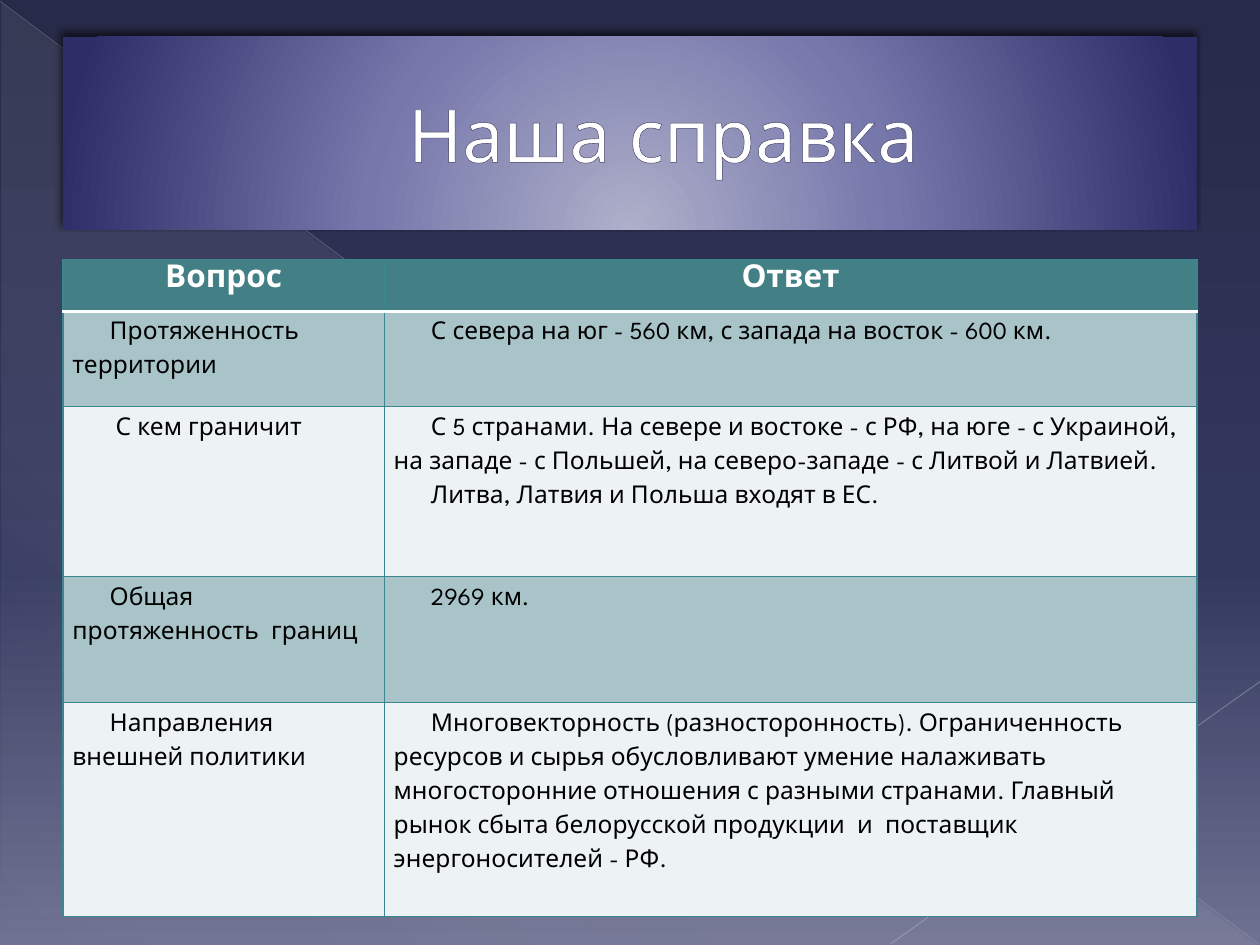
from lxml import etree
from pptx import Presentation
from pptx.dml.color import RGBColor
from pptx.enum.shapes import MSO_CONNECTOR, MSO_SHAPE
from pptx.enum.text import MSO_ANCHOR, PP_ALIGN
from pptx.oxml.ns import qn
from pptx.util import Pt

LINE = MSO_CONNECTOR.STRAIGHT
RECT, WEDGE = MSO_SHAPE.RECTANGLE, MSO_SHAPE.RIGHT_TRIANGLE
MIDDLE = MSO_ANCHOR.MIDDLE
LEFT, CENTER = PP_ALIGN.LEFT, PP_ALIGN.CENTER
FONT = "League Spartan"
COLORS = {
    "white": "FFFFFF", "black": "000000", "edge": "3C868D",
    "head": "438086", "band": "A9C4C8", "plain": "EDF3F5",
    "outline": "3A3A60", "pale": "DEDEDE", "ray": "B7B7BE", "beam": "BFBFC5",
    "night": "272A48", "dusk": "33385F", "haze": "6E7191",
    "glow": "AEAFC9", "violet": "7677AB", "navy": "2D2E68",
}
COLS = [183.6, 464.4]
ROWS = [29.5, 54.7, 97.2, 72, 122]
HEADS = ["Вопрос", "Ответ"]
FACTS = [
    ("Протяженность территории",
     "С севера на юг - 560 км, с запада на восток - 600 км."),
    (" С кем граничит",
     "С 5 странами. На севере и востоке - с РФ, на юге - с Украиной, "
     "на западе - с Польшей, на северо-западе - с Литвой и Латвией.\n"
     "Литва, Латвия и Польша входят в ЕС."),
    ("Общая протяженность  границ", "2969 км."),
    ("Направления внешней политики",
     "Многовекторность (разносторонность). Ограниченность ресурсов и сырья "
     "обусловливают умение налаживать многосторонние отношения с разными "
     "странами. Главный рынок сбыта белорусской продукции  и  поставщик "
     "энергоносителей - РФ."),
]


def rgb(name):
    return RGBColor.from_string(COLORS[name])


def node(parent, tag, **attrs):
    return etree.SubElement(parent, qn(tag), {k: str(v) for k, v in attrs.items()})


def tint(parent, name, alpha=100):
    color = node(parent, "a:srgbClr", val=COLORS[name])
    if alpha < 100:
        node(color, "a:alpha", val=alpha * 1000)


def blend(parent, stops, angle=None):
    """Swap the solid fill in parent for a gradient, radial without an angle."""
    old = parent.find(qn("a:solidFill"))
    grad = etree.Element(qn("a:gradFill"), rotWithShape="1")
    items = node(grad, "a:gsLst")
    for spot, name, alpha in stops:
        tint(node(items, "a:gs", pos=spot * 1000), name, alpha)
    if angle is None:
        shade = node(grad, "a:path", path="circle")
        node(shade, "a:fillToRect", l=50000, t=155000, r=50000, b=-55000)
    else:
        node(grad, "a:lin", ang=angle * 60000, scaled=0)
    parent.replace(old, grad)


def write(frame, text, size=14, color="black", bold=False, align=LEFT,
          margin=0, indent=0, spacing=None, outline=None):
    frame.word_wrap = True
    for i, part in enumerate(text.split("\n")):
        para = frame.add_paragraph() if i else frame.paragraphs[0]
        para.alignment, para.line_spacing = align, spacing
        props = para._p.get_or_add_pPr()
        props.set("marL", str(Pt(margin)))
        props.set("indent", str(Pt(indent)))
        run = para.add_run()
        run.text = part
        font = run.font
        font.name, font.size, font.bold = FONT, Pt(size), bold
        font.color.rgb = rgb(color)
        if outline:
            line = etree.Element(qn("a:ln"), w=str(Pt(0.5)))
            tint(node(line, "a:solidFill"), outline)
            run._r.get_or_add_rPr().insert(0, line)


class Deck:
    def __init__(self):
        self.prs = Presentation()
        self.prs.slide_width, self.prs.slide_height = Pt(720), Pt(540)
        self.slide = self.prs.slides.add_slide(self.prs.slide_layouts[6])
        self.shapes = self.slide.shapes

    def ground(self, stops):
        self.slide.background.fill.solid()
        blend(self.slide._element.cSld.bg.bgPr, stops, 90)

    def shape(self, kind, box, stops, angle=None):
        shape = self.shapes.add_shape(kind, *map(Pt, box))
        shape.shadow.inherit = False
        shape.line.fill.background()
        shape.fill.solid()
        blend(shape._element.spPr, stops, angle)
        return shape

    def line(self, ends, color, width, alpha):
        line = self.shapes.add_connector(LINE, *map(Pt, ends))
        line.line.width = Pt(width)
        line.line.color.rgb = rgb(color)
        props = line._element.spPr
        node(props.find(".//" + qn("a:srgbClr")), "a:alpha", val=alpha * 1000)
        node(props, "a:effectLst")

    def title(self, text, box, stops):
        shape = self.shape(RECT, box, stops)
        effects = shape._element.spPr.find(qn("a:effectLst"))
        shadow = node(effects, "a:outerShdw", blurRad=Pt(4), dist=Pt(3),
                      dir=245 * 60000, rotWithShape=0)
        tint(shadow, "black", 60)
        shape.text_frame.vertical_anchor = MIDDLE
        write(shape.text_frame, text, size=42, color="white", align=CENTER,
              margin=38, outline="outline")

    def cell(self, cell, fill, head):
        cell.fill.solid()
        cell.fill.fore_color.rgb = rgb(fill)
        props = cell._tc.get_or_add_tcPr()
        for i, side in enumerate("LRTB"):
            white = head and side == "B"
            line = etree.Element(qn("a:ln" + side), w=str(Pt(2 if white else 0.75)))
            tint(node(line, "a:solidFill"), "white" if white else "edge")
            props.insert(i, line)

    def table(self, left, top):
        frame = self.shapes.add_table(len(ROWS), len(COLS), Pt(left), Pt(top),
                                      Pt(sum(COLS)), Pt(sum(ROWS)))
        table = frame.table
        for col, width in zip(table.columns, COLS):
            col.width = Pt(width)
        for r, texts in enumerate([HEADS, *FACTS]):
            table.rows[r].height = Pt(ROWS[r])
            fill = "head" if r == 0 else "band" if r % 2 else "plain"
            for c, text in enumerate(texts):
                cell = table.cell(r, c)
                self.cell(cell, fill, r == 0)
                if r == 0:
                    write(cell.text_frame, text, size=18, color="white",
                          bold=True, align=CENTER)
                    continue
                cell.margin_left = cell.margin_right = Pt(5.4)
                cell.margin_top = cell.margin_bottom = 0
                write(cell.text_frame, text, indent=21.3, spacing=1.5)
                if r == 1:
                    above = cell._tc.tcPr.find(qn("a:lnT"))
                    above.set("w", str(Pt(2)))
                    above.find(".//" + qn("a:srgbClr")).set("val", COLORS["white"])


def main():
    deck = Deck()
    deck.ground([(0, "night", 100), (60, "dusk", 100), (100, "haze", 100)])
    deck.shape(WEDGE, (0.7, 1.4, 718.6, 538.6),
               [(0, "pale", 10), (70, "pale", 8), (100, "pale", 1)], 133)
    deck.line((0, 0.7, 719.3, 539.3), "ray", 0.39, 35)
    deck.line((720, 389.5, 509, 539.3), "beam", 0.47, 45)
    deck.title("Наша справка", (36, 21, 648, 110),
               [(0, "glow", 100), (46, "violet", 100), (100, "navy", 100)])
    deck.table(36, 148.3)
    deck.prs.save("out.pptx")


if __name__ == "__main__":
    main()
